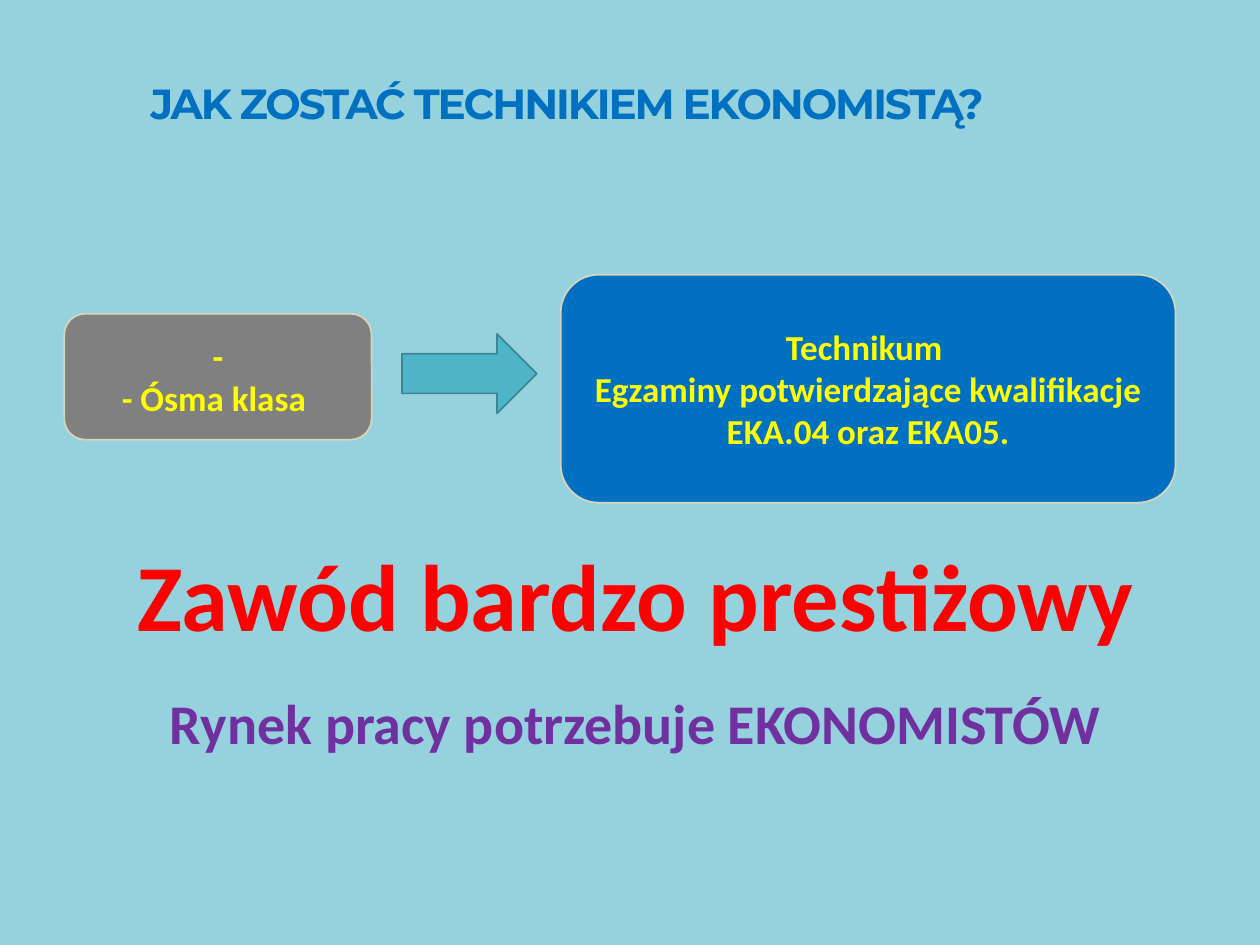
from pptx import Presentation
from pptx.dml.color import RGBColor
from pptx.enum.shapes import MSO_SHAPE as Preset
from pptx.enum.text import MSO_ANCHOR as Anchor, PP_ALIGN as Align
from pptx.util import Inches, Pt

BACKGROUND = RGBColor(0x96, 0xD2, 0xDE)
BLUE = RGBColor(0x00, 0x70, 0xC0)
GRAY = RGBColor(0x80, 0x80, 0x80)
SAND = RGBColor(0xD9, 0xD5, 0xBA)
TEAL = RGBColor(0x50, 0xB4, 0xC8)
DARK_TEAL = RGBColor(0x3B, 0x85, 0x94)
YELLOW = RGBColor(0xFF, 0xFF, 0x00)
RED = RGBColor(0xFF, 0x00, 0x00)
PURPLE = RGBColor(0x70, 0x30, 0xA0)


def write_line(para, text, size, color, font="Calibri"):
    para.text = text
    para.alignment = Align.CENTER
    para.font.name = font
    para.font.size = Pt(size)
    para.font.bold = True
    para.font.color.rgb = color


def add_text_frame(page, box):
    frame = page.shapes.add_textbox(*map(Inches, box)).text_frame
    frame.word_wrap = True
    return frame


def add_preset(page, box, preset, fill, outline):
    shape = page.shapes.add_shape(preset, *map(Inches, box))
    shape.shadow.inherit = False
    shape.fill.solid()
    shape.fill.fore_color.rgb = fill
    shape.line.color.rgb = outline
    shape.line.width = Pt(1)
    return shape


def add_title(page, box):
    frame = add_text_frame(page, box)
    frame.vertical_anchor = Anchor.MIDDLE
    para = frame.paragraphs[0]
    write_line(para, "JAK ZOSTAĆ TECHNIKIEM EKONOMISTĄ?", 24, BLUE, "Montserrat")
    para.line_spacing = 0.9
    para.runs[0].font._element.set("spc", "-120")


def add_stage(page, box, fill, lines):
    """Rounded box for one stage of education."""
    frame = add_preset(page, box, Preset.ROUNDED_RECTANGLE, fill, SAND).text_frame
    frame.word_wrap = True
    frame.vertical_anchor = Anchor.MIDDLE
    for index, line in enumerate(lines):
        para = frame.add_paragraph() if index else frame.paragraphs[0]
        write_line(para, line, 20, YELLOW)


def add_slogans(page, box):
    frame = add_text_frame(page, box)
    write_line(frame.paragraphs[0], "Zawód bardzo prestiżowy", 54, RED)
    need = frame.add_paragraph()
    write_line(need, "Rynek pracy potrzebuje EKONOMISTÓW", 32, PURPLE)
    need.space_before = Pt(22)


def main():
    deck = Presentation()
    deck.slide_width, deck.slide_height = Inches(10), Inches(7.5)
    page = deck.slides.add_slide(deck.slide_layouts[6])
    page.background.fill.solid()
    page.background.fill.fore_color.rgb = BACKGROUND

    add_title(page, (0, 0.21, 9, 1.26))
    add_stage(page, (0.51, 2.49, 2.44, 1), GRAY, ["-", "- Ósma klasa "])
    add_preset(page, (3.19, 2.65, 1.07, 0.63), Preset.RIGHT_ARROW, TEAL, DARK_TEAL)
    add_stage(page, (4.45, 2.18, 4.88, 1.81), BLUE, [
        "Technikum ",
        "Egzaminy potwierdzające kwalifikacje EKA.04 oraz EKA05.",
    ])
    add_slogans(page, (0.2, 4.21, 9.69, 2.39))
    deck.save("out.pptx")


if __name__ == "__main__":
    main()
